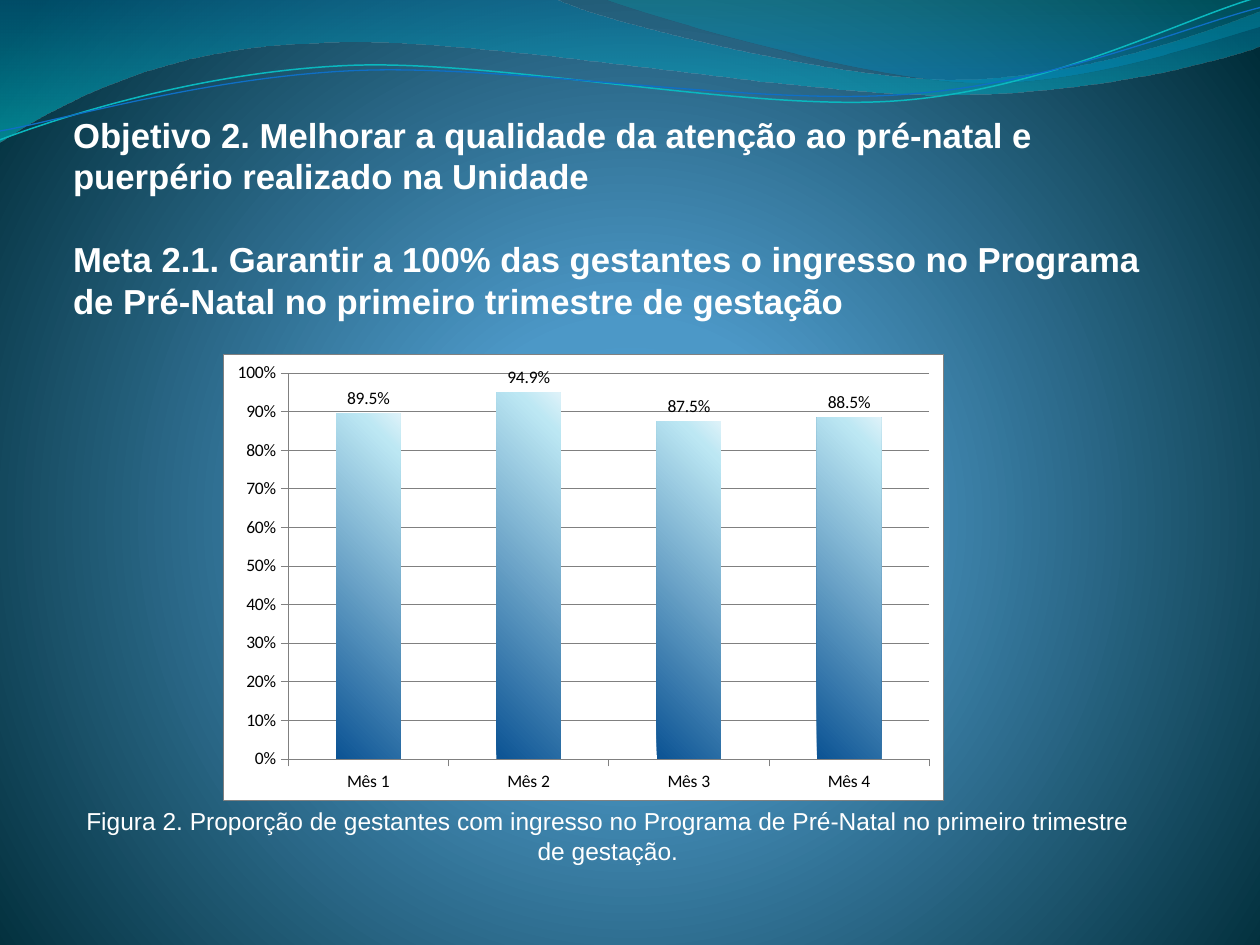
from dataclasses import dataclass

from lxml import etree
from pptx import Presentation
from pptx.chart.data import CategoryChartData
from pptx.dml.color import RGBColor
from pptx.enum.chart import XL_CHART_TYPE, XL_LABEL_POSITION, XL_TICK_MARK
from pptx.enum.text import MSO_ANCHOR, MSO_AUTO_SIZE, PP_ALIGN
from pptx.oxml import parse_xml
from pptx.oxml.ns import nsdecls, qn
from pptx.util import Inches, Pt

COLUMN = XL_CHART_TYPE.COLUMN_CLUSTERED
OUT_END = XL_LABEL_POSITION.OUTSIDE_END
OUTSIDE = XL_TICK_MARK.OUTSIDE
NO_TICK = XL_TICK_MARK.NONE
TOP, BOTTOM = MSO_ANCHOR.TOP, MSO_ANCHOR.BOTTOM
LEFT, CENTER = PP_ALIGN.LEFT, PP_ALIGN.CENTER
NO_FIT = MSO_AUTO_SIZE.NONE


@dataclass(frozen=True)
class Theme:
    font: str = "Arial"
    chart_font: str = "Calibri"
    white: str = "FFFFFF"
    black: str = "000000"
    grey: str = "808080"
    teal: str = "0AB8BF"
    blue: str = "0F6FC6"
    title: float = 19.8
    body: float = 14
    label: float = 10
    thin: float = 0.25
    back: tuple = ((0, "4AA0D6", 100), (25, "4C98C7", 100), (100, "002C38", 100))
    wide: tuple = ((0, "0074A1", 45), (100, "00C6CF", 55))
    small: tuple = ((0, "00A1A9", 30), (80, "008BBF", 45))
    bar: tuple = ((0, "0B5394", 100), (90, "BCE7F3", 100), (100, "DEF2F9", 100))


class Deck:
    def __init__(self, theme):
        self.theme = theme
        self.prs = Presentation()
        self.prs.slide_width, self.prs.slide_height = Inches(10), Inches(7.5)
        self.slide = self.prs.slides.add_slide(self.prs.slide_layouts[0])

    def blend(self, fill, owner, stops, angle=None):
        fill.gradient()
        grad = owner.find(".//" + qn("a:gradFill"))
        for child in list(grad):
            grad.remove(child)
        items = etree.SubElement(grad, qn("a:gsLst"))
        for place, color, alpha in stops:
            stop = etree.SubElement(items, qn("a:gs"), pos=str(place * 1000))
            tone = etree.SubElement(stop, qn("a:srgbClr"), val=color)
            if alpha < 100:
                etree.SubElement(tone, qn("a:alpha"), val=str(alpha * 1000))
        if angle is None:
            ring = etree.SubElement(grad, qn("a:path"), {"path": "circle"})
            etree.SubElement(ring, qn("a:fillToRect"), l="10000", t="110000",
                             r="10000", b="100000")
        else:
            etree.SubElement(grad, qn("a:lin"), ang=str(angle * 60000), scaled="0")

    def backdrop(self):
        self.blend(self.slide.background.fill, self.slide.element, self.theme.back)

    def stroke(self, line, color, width):
        line.color.rgb = RGBColor.from_string(color)
        line.width = Pt(width)

    def curve(self, start, steps, closed):
        pen = self.slide.shapes.build_freeform(*map(Inches, start))
        pen.add_line_segments([(Inches(x), Inches(y)) for step in steps
                               for x, y in zip(step[::2], step[1::2])], close=closed)
        shape = pen.convert_to_shape()
        shape.shadow.inherit = False
        parts = iter(list(shape.element.iter(qn("a:lnTo"))))
        for step in steps:
            first = next(parts)
            if len(step) == 6:
                bend = etree.Element(qn("a:cubicBezTo"))
                first.addprevious(bend)
                for part in (first, next(parts), next(parts)):
                    bend.append(part[0])
                    part.getparent().remove(part)
        return shape

    def wave(self, start, steps, stops):
        shape = self.curve(start, steps, True)
        self.blend(shape.fill, shape.element, stops, 90)
        shape.line.fill.background()

    def thread(self, start, steps, color, width):
        shape = self.curve(start, steps, False)
        shape.fill.background()
        self.stroke(shape.line, color, width)

    def text(self, index, box, lines, size, pitch, align, anchor, pads, bold=False):
        holder = self.slide.placeholders[index]
        self.slide.shapes.element.append(holder.element)
        holder.left, holder.top, holder.width, holder.height = map(Inches, box)
        frame = holder.text_frame
        frame.text = "\n".join(lines)
        frame.word_wrap = True
        frame.auto_size = NO_FIT
        frame.vertical_anchor = anchor
        frame.margin_left = 0
        frame.margin_top, frame.margin_right, frame.margin_bottom = map(Inches, pads)
        for i, para in enumerate(frame.paragraphs):
            para.alignment = align
            para.line_spacing = Pt(pitch)
            para.space_before = Pt(pitch if i else 0)
            font = para.font
            font.name, font.size, font.bold = self.theme.font, Pt(size), bold
            font.color.rgb = RGBColor.from_string(self.theme.white)

    def chart(self, box, names, values):
        theme = self.theme
        data = CategoryChartData()
        data.categories = names
        data.add_series("Series 1", values)
        chart = self.slide.shapes.add_chart(COLUMN, *map(Inches, box), data).chart
        chart.has_legend = chart.has_title = False
        chart.font.name, chart.font.size = theme.chart_font, Pt(theme.label)
        chart.font.color.rgb = RGBColor.from_string(theme.black)
        chart.element.find(qn("c:chart")).addnext(parse_xml(
            f'<c:spPr {nsdecls("c", "a")}>'
            f'<a:solidFill><a:srgbClr val="{theme.white}"/></a:solidFill>'
            f'<a:ln w="{Pt(theme.thin)}"><a:solidFill>'
            f'<a:srgbClr val="{theme.grey}"/></a:solidFill></a:ln></c:spPr>'))
        scale = chart.value_axis
        for axis in (chart.category_axis, scale):
            axis.major_tick_mark, axis.minor_tick_mark = OUTSIDE, NO_TICK
            self.stroke(axis.format.line, theme.grey, theme.thin)
        scale.minimum_scale, scale.maximum_scale, scale.major_unit = 0, 1, 0.1
        scale.tick_labels.number_format = "0%"
        scale.tick_labels.number_format_is_linked = False
        scale.has_major_gridlines = True
        self.stroke(scale.major_gridlines.format.line, theme.grey, theme.thin)
        plot = chart.plots[0]
        plot.gap_width, plot.vary_by_categories = 150, False
        bars = plot.series[0]
        self.blend(bars.format.fill, bars._element, theme.bar, 315)
        labels = bars.data_labels
        labels.show_value, labels.position = True, OUT_END
        labels.number_format, labels.number_format_is_linked = "0.0%", False


def main():
    theme = Theme()
    deck = Deck(theme)
    deck.backdrop()
    deck.wave((0, 0), [
        (4.4, -0.01), (4.76, 0.17, 6.64, 0.63, 7.58, 0.63),
        (8.53, 0.63, 9.58, 0.26, 10, 0.09), (10.01, 0.36),
        (9.83, 0.44, 8.7, 0.76, 7.46, 0.75), (6.22, 0.75, 3.82, 0.28, 2.57, 0.34),
        (1.29, 0.36, 0.46, 0.83, -0.01, 1.13)], theme.wide)
    deck.wave((4.79, -0.01), [
        (5.09, 0.11, 6.82, 0.62, 7.69, 0.65),
        (8.56, 0.69, 9.61, 0.32, 10, 0.21), (10, 0)], theme.small)
    deck.thread((0, 1.11), [
        (0.48, 0.93, 1.58, 0.57, 2.77, 0.52), (3.95, 0.47, 5.93, 0.89, 7.13, 0.8),
        (8.33, 0.71, 9.38, 0.15, 9.98, -0.02)], theme.teal, 0.85)
    deck.thread((0, 1.04), [
        (0.47, 0.96, 1.64, 0.61, 2.83, 0.56), (4.03, 0.51, 5.97, 0.84, 7.17, 0.75),
        (8.36, 0.67, 9.41, 0.21, 10, 0.06)], theme.blue, 0.75)
    deck.text(0, (0.58, 1.55, 8.59, 1.34), [
        "Objetivo 2. Melhorar a qualidade da atenção ao pré-natal e puerpério "
        "realizado na Unidade",
        "Meta 2.1. Garantir a 100% das gestantes o ingresso no Programa de "
        "Pré-Natal no primeiro trimestre de gestação",
    ], theme.title, 23.7, LEFT, BOTTOM, (0, 0.02, 0.34), True)
    deck.text(1, (0.58, 6.35, 8.59, 0.55), [
        "Figura 2. Proporção de gestantes com ingresso no Programa de Pré-Natal "
        "no primeiro trimestre de gestação.",
    ], theme.body, 17.1, CENTER, TOP, (0.04, 0.1, 0.05))
    deck.chart((1.77, 2.81, 5.72, 3.54), [f"Mês {n}" for n in range(1, 5)],
               (0.895, 0.949, 0.875, 0.885))
    deck.prs.save("out.pptx")


if __name__ == "__main__":
    main()
